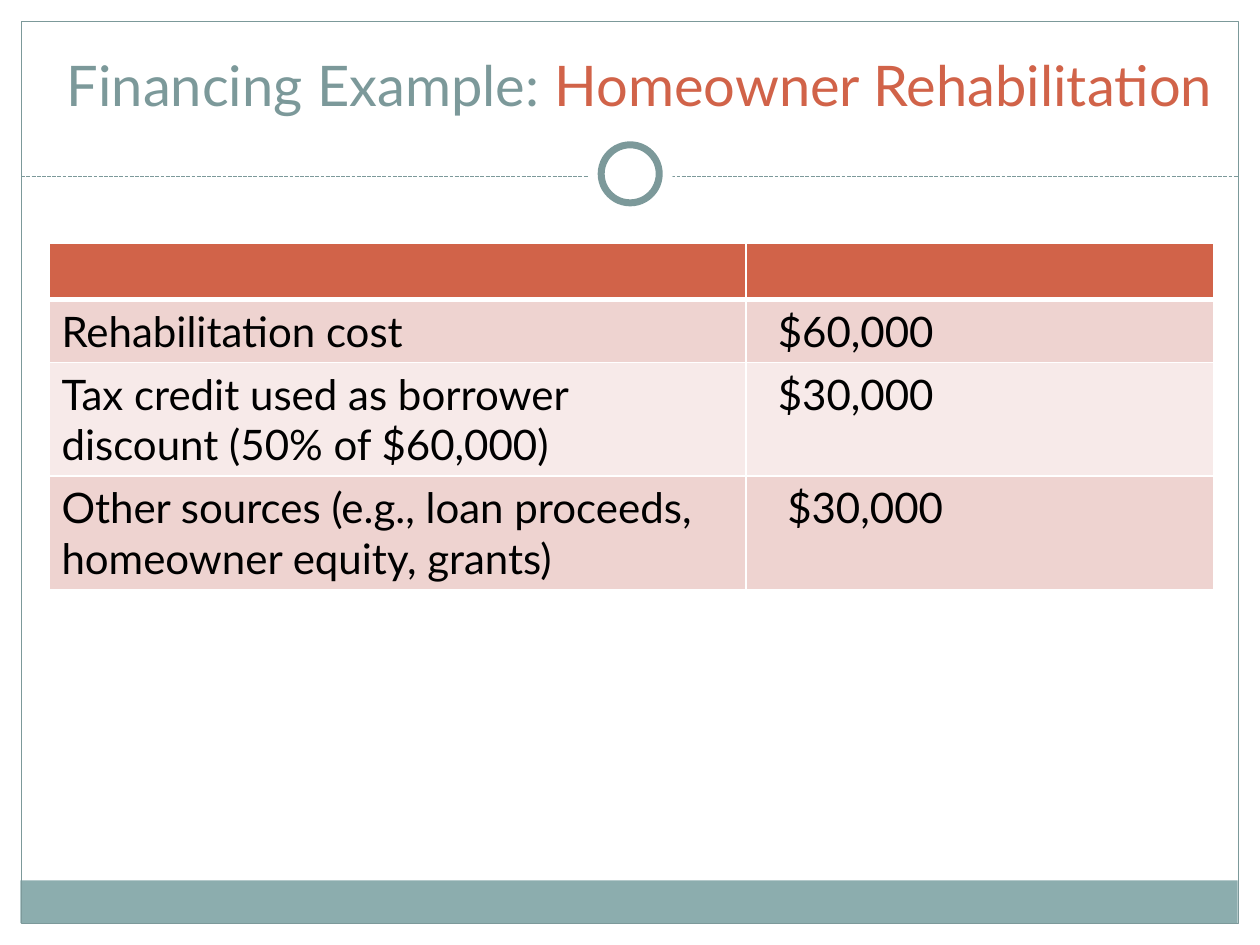
from lxml.etree import SubElement as Sub
from pptx import Presentation
from pptx.dml.color import RGBColor as Rgb
from pptx.enum.dml import MSO_LINE as Dash
from pptx.enum.shapes import MSO_CONNECTOR as Link, MSO_SHAPE as Kind
from pptx.enum.text import MSO_ANCHOR as Anchor, MSO_AUTO_SIZE as Auto, PP_ALIGN as Align
from pptx.oxml.ns import qn
from pptx.util import Cm, Pt

HUES = {
    "white": "FFFFFF", "black": "000000", "teal": "7C999A", "band": "8CADAE",
    "rust": "D16349", "rose": "EED3D0", "pale": "F7EAE9",
}


def hue(name):
    return Rgb.from_string(HUES[name])


def style(run, size, color):
    for key, val in {"name": "Lato", "size": Pt(size), "bold": False}.items():
        setattr(run.font, key, val)
    run.font.color.rgb = hue(color)


deck = Presentation()
deck.slide_width, deck.slide_height = Cm(25.4), Cm(19.05)
slide = deck.slides.add_slide(deck.slide_layouts[5])
shapes = slide.shapes

# Footer band and page frame
parts = [
    (Kind.RECTANGLE, (0.41, 17.75, 24.54, 0.86), "band", None, 0),
    (Kind.RECTANGLE, (0.43, 0.43, 24.54, 18.19), None, "teal", 0.75),
]
# Ring that breaks the dashed rule
rings = [
    (Kind.OVAL, (11.86, 2.67, 1.7, 1.7), "white", None, 0),
    (Kind.OVAL, (12.12, 2.92, 1.17, 1.17), "white", "teal", 4),
]
for kind, box, fill, line, width in parts + rings:
    if kind == Kind.OVAL and fill == "white" and line is None:
        rule = shapes.add_connector(Link.STRAIGHT, Cm(0.43), Cm(3.56), Cm(24.97), Cm(3.56))
        rule.line.color.rgb = hue("teal")
        rule.line.width = Pt(0.75)
        rule.line.dash_style = Dash.SQUARE_DOT
        Sub(rule.line._get_or_add_ln().getparent(), qn("a:effectLst"))
    part = shapes.add_shape(kind, *map(Cm, box))
    part.shadow.inherit = False
    if fill:
        part.fill.solid()
        part.fill.fore_color.rgb = hue(fill)
    else:
        part.fill.background()
    if line:
        part.line.color.rgb = hue(line)
        part.line.width = Pt(width)
    else:
        part.line.fill.background()

# Title in two colours
title = shapes.title
spot = {"left": 0.51, "top": 0.64, "width": 24.77, "height": 2.11}
for key, val in spot.items():
    setattr(title, key, Cm(val))
frame = title.text_frame
form = {"word_wrap": True, "auto_size": Auto.NONE, "vertical_anchor": Anchor.MIDDLE}
for key, val in form.items():
    setattr(frame, key, val)
para = frame.paragraphs[0]
para.alignment = Align.CENTER
for text, color in [("Financing Example: ", "teal"), ("Homeowner Rehabilitation", "rust")]:
    run = para.add_run()
    run.text = text
    style(run, 32, color)

# Cost table: label, amount, indent of the amount, row height, fill
rows = [
    ("", "", 0.25, 1.14, "rust"),
    ("Rehabilitation cost", "$60,000", 0.64, 1.24, "rose"),
    ("Tax credit used as borrower discount (50% of $60,000)", "$30,000", 0.64, 2.29, "pale"),
    ("Other sources (e.g., loan proceeds, homeowner equity, grants)",
     "$30,000", 0.83, 2.29, "rose"),
]
high = sum(row[3] for row in rows)
table = shapes.add_table(len(rows), 2, Cm(0.99), Cm(4.9), Cm(23.47), Cm(high)).table
for col, width in zip(table.columns, (14.05, 9.42)):
    col.width = Cm(width)

for r, (label, cost, dent, tall, fill) in enumerate(rows):
    table.rows[r].height = Cm(tall)
    for c, (text, left) in enumerate([(label, 0.25), (cost, dent)]):
        cell = table.cell(r, c)
        cell.margin_left = Cm(left)
        if text:
            run = cell.text_frame.paragraphs[0].add_run()
            run.text = text
            style(run, 24, "black")
        # White borders, thick between header and body
        for side in "LRTB":
            thick = (r, side) in [(0, "B"), (1, "T")]
            edge = Sub(cell._tc.get_or_add_tcPr(), qn(f"a:ln{side}"), w=str(Pt(3 if thick else 1)))
            Sub(Sub(edge, qn("a:solidFill")), qn("a:srgbClr"), val=HUES["white"])
        cell.fill.solid()
        cell.fill.fore_color.rgb = hue(fill)

deck.save("out.pptx")
